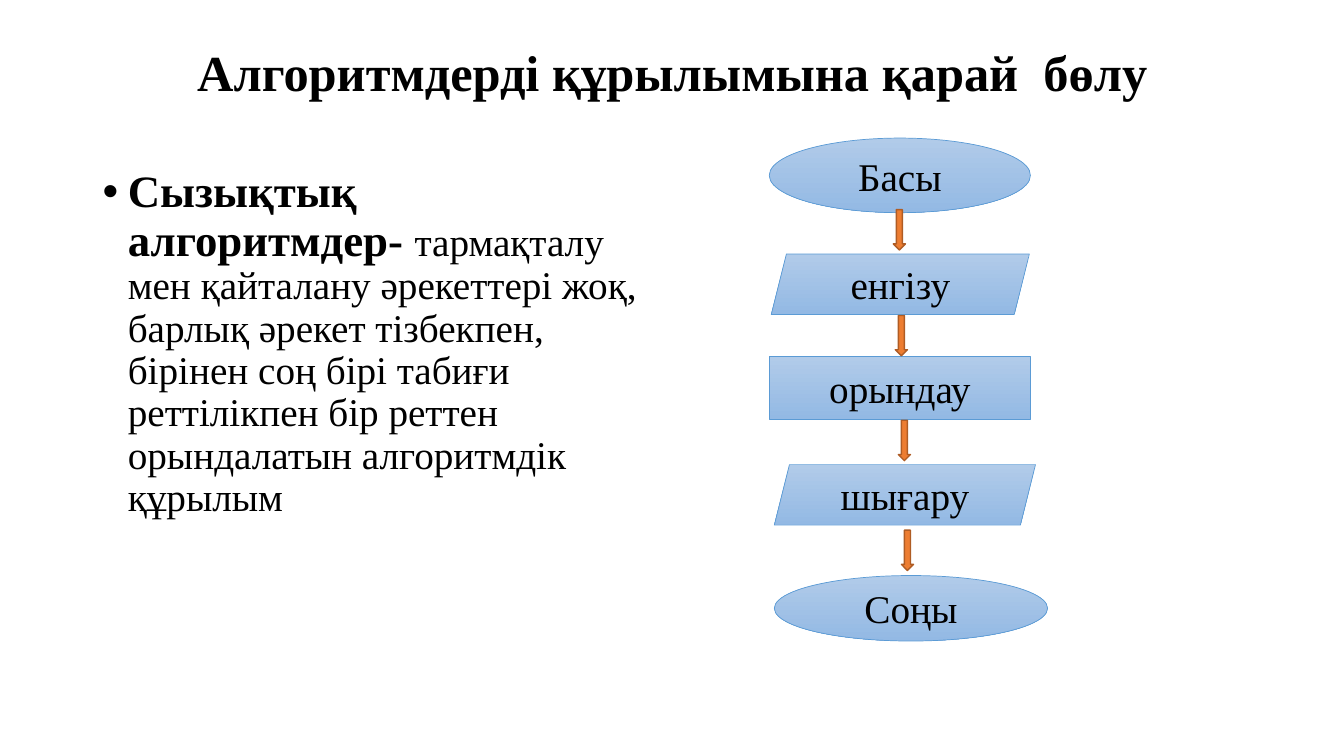
from lxml import etree
from pptx import Presentation
from pptx.dml.color import RGBColor
from pptx.enum.shapes import MSO_SHAPE as SHAPE
from pptx.enum.text import MSO_ANCHOR as ANCHOR, MSO_AUTO_SIZE as AUTO, PP_ALIGN as ALIGN
from pptx.oxml.ns import qn
from pptx.util import Inches, Pt

FONT = "Times New Roman"
BLACK = RGBColor(0x00, 0x00, 0x00)
BLUE_LIGHT = RGBColor(0xB1, 0xCB, 0xE9)
BLUE_DEEP = RGBColor(0x93, 0xB9, 0xE4)
BLUE_LINE = RGBColor(0x5B, 0x9B, 0xD5)
ORANGE = RGBColor(0xED, 0x7D, 0x31)
ORANGE_LINE = RGBColor(0xAF, 0x5C, 0x24)

STEPS = [
    (SHAPE.OVAL, "Басы", 0, 0, 2.59, 0.74),
    (SHAPE.PARALLELOGRAM, "енгізу", 0.02, 1.15, 2.56, 0.6),
    (SHAPE.RECTANGLE, "орындау", 0, 2.17, 2.59, 0.62),
    (SHAPE.PARALLELOGRAM, "шығару", 0.05, 3.24, 2.59, 0.6),
    (SHAPE.OVAL, "Соңы", 0.05, 4.34, 2.71, 0.65),
]
ARROWS = [(1.23, 0.71), (1.25, 1.76), (1.28, 2.8), (1.31, 3.89)]


def add_run(p, text, size, bold=False):
    """Append one formatted run to a paragraph."""
    r = p.add_run()
    r.text = text
    r.font.name, r.font.size, r.font.bold = FONT, Pt(size), bold
    r.font.color.rgb = BLACK


def add_title(s, left, top, width, height):
    """Fill the title placeholder within the given box."""
    sp = s.shapes.title
    sp.left, sp.top = Inches(left), Inches(top)
    sp.width, sp.height = Inches(width), Inches(height)
    tf = sp.text_frame
    tf.auto_size, tf.vertical_anchor = AUTO.NONE, ANCHOR.MIDDLE
    p = tf.paragraphs[0]
    p.alignment, p.line_spacing = ALIGN.CENTER, 0.9
    add_run(p, "Алгоритмдерді құрылымына қарай  бөлу", 36, True)


def add_definition(s, left, top, width, height):
    """Write the bulleted definition within the given box."""
    sp = s.shapes.add_textbox(Inches(left), Inches(top), Inches(width), Inches(height))
    tf = sp.text_frame
    tf.word_wrap = True
    p = tf.paragraphs[0]
    p.line_spacing, p.space_before = 0.9, Pt(10)
    pPr = p._p.get_or_add_pPr()
    pPr.set("marL", str(Inches(0.25)))
    pPr.set("indent", str(Inches(-0.25)))
    etree.SubElement(pPr, qn("a:buFont")).set("typeface", "Arial")
    etree.SubElement(pPr, qn("a:buChar")).set("char", "•")
    add_run(p, "Сызықтық алгоритмдер- ", 32, True)
    add_run(p, "тармақталу мен қайталану әрекеттері жоқ, барлық әрекет тізбекпен, "
               "бірінен соң бірі табиғи реттілікпен бір реттен орындалатын "
               "алгоритмдік құрылым", 28)


def add_outlined(s, kind, left, top, width, height, color, weight):
    """Add a preset shape without shadow and with the given outline."""
    sp = s.shapes.add_shape(kind, Inches(left), Inches(top), Inches(width), Inches(height))
    sp.shadow.inherit = False
    sp.line.color.rgb, sp.line.width = color, Pt(weight)
    return sp


def add_step(s, kind, text, left, top, width, height):
    """Draw one flowchart block with its label."""
    sp = add_outlined(s, kind, left, top, width, height, BLUE_LINE, 0.5)
    sp.fill.gradient()
    sp.fill.gradient_angle = 270
    for stop, color in zip(sp.fill.gradient_stops, (BLUE_LIGHT, BLUE_DEEP)):
        stop.color.rgb = color
    tf = sp.text_frame
    tf.vertical_anchor = ANCHOR.MIDDLE
    p = tf.paragraphs[0]
    p.alignment = ALIGN.CENTER
    add_run(p, text, 28)


def add_flowchart(s, left, top):
    """Draw the linear flowchart from its top left corner."""
    for kind, text, x, y, width, height in STEPS:
        add_step(s, kind, text, left + x, top + y, width, height)
    for x, y in ARROWS:
        sp = add_outlined(s, SHAPE.DOWN_ARROW, left + x, top + y, 0.12, 0.4, ORANGE_LINE, 1)
        sp.fill.solid()
        sp.fill.fore_color.rgb = ORANGE


def main():
    """Build the slide and save it."""
    prs = Presentation()
    prs.slide_width, prs.slide_height = Inches(13.33), Inches(7.5)
    s = prs.slides.add_slide(prs.slide_layouts[5])
    add_title(s, 0.92, 0.4, 11.5, 0.69)
    add_definition(s, 0.92, 1.63, 5.53, 5.16)
    add_flowchart(s, 7.63, 1.37)
    prs.save("out.pptx")


if __name__ == "__main__":
    main()
